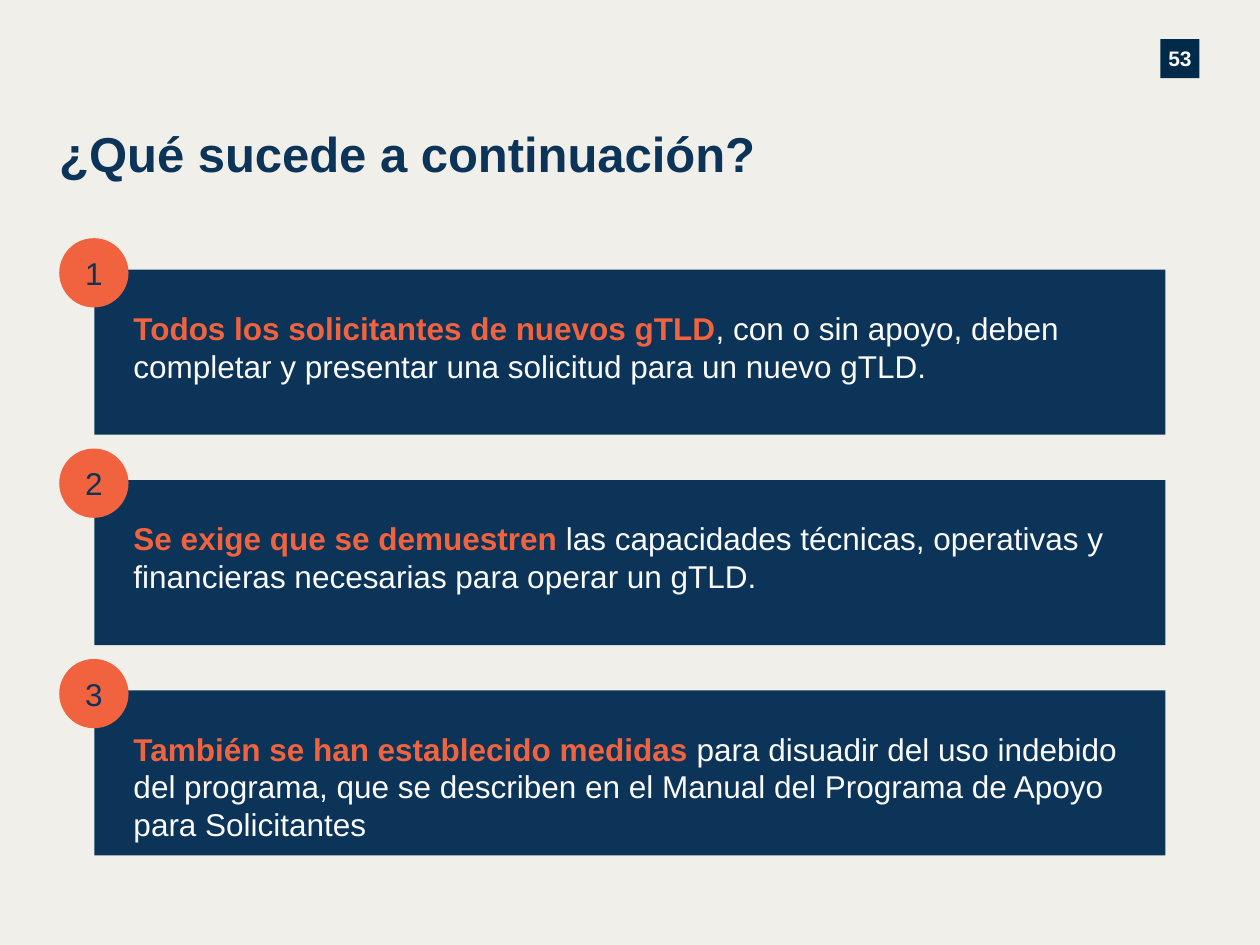
import pptx
import pptx.util
import pptx.dml.color
import pptx.enum.shapes
import pptx.enum.text

Inches = pptx.util.Inches
Shape = pptx.enum.shapes.MSO_SHAPE
Align = pptx.enum.text.PP_ALIGN
Anchor = pptx.enum.text.MSO_ANCHOR

NAVY, DARK, CORAL = "0B3458", "002A49", "F1633E"
WHITE, CREAM = "FAFAFA", "F1EFEA"


def paint(fill, color):
    fill.solid()
    fill.fore_color.rgb = pptx.dml.color.RGBColor.from_string(color)


class Deck:
    font = "Arial"

    def __init__(self, wide, high):
        self.file = pptx.Presentation()
        self.file.slide_width = Inches(wide)
        self.file.slide_height = Inches(high)
        self.slide = self.file.slides.add_slide(self.file.slide_layouts[6])
        paint(self.slide.background.fill, CREAM)

    def label(self, shape, runs, size, pad=(0, 0, 0, 0),
              align=Align.LEFT, anchor=Anchor.TOP):
        """Each run is (text, color, bold); pad is left, top, right, bottom."""
        frame = shape.text_frame
        frame.word_wrap = True
        frame.vertical_anchor = anchor
        (frame.margin_left, frame.margin_top,
         frame.margin_right, frame.margin_bottom) = map(Inches, pad)
        para = frame.paragraphs[0]
        para.alignment = align
        for text, color, bold in runs:
            run = para.add_run()
            run.text = text
            run.font.name = self.font
            run.font.size = pptx.util.Pt(size)
            run.font.bold = bold
            paint(run.font.fill, color)

    def text(self, box, runs, size):
        shape = self.slide.shapes.add_textbox(*map(Inches, box))
        self.label(shape, runs, size)

    def block(self, kind, box, color, runs, size, **style):
        shape = self.slide.shapes.add_shape(kind, *map(Inches, box))
        shape.shadow.inherit = False
        paint(shape.fill, color)
        shape.line.fill.background()
        self.label(shape, runs, size, **style)

    def badge(self, kind, box, color, run, size):
        self.block(kind, box, color, [run], size,
                   align=Align.CENTER, anchor=Anchor.MIDDLE)


STEPS = [
    ("Todos los solicitantes de nuevos gTLD",
     ", con o sin apoyo, deben completar y presentar una solicitud "
     "para un nuevo gTLD."),
    ("Se exige que se demuestren ",
     "las capacidades técnicas, operativas y financieras necesarias "
     "para operar un gTLD."),
    ("También se han establecido medidas ",
     "para disuadir del uso indebido del programa, que se describen en el "
     "Manual del Programa de Apoyo para Solicitantes"),
]


def main():
    deck = Deck(10, 7.5)

    # Page number and title
    deck.badge(Shape.RECTANGLE, (9.21, 0.31, 0.31, 0.31), DARK,
               ("53", WHITE, True), 12)
    deck.text((0.47, 0.98, 5.88, 0.58),
              [("¿Qué sucede a continuación?", NAVY, True)], 28)

    # Numbered steps
    top, pitch = 2.14, 1.67
    for i, (lead, rest) in enumerate(STEPS):
        y = top + i * pitch
        deck.block(Shape.RECTANGLE, (0.75, y, 8.5, 1.31), NAVY,
                   [(lead, CORAL, True), (rest, WHITE, False)], 18,
                   pad=(0.31, 0.31, 0.35, 0.31))
        deck.badge(Shape.OVAL, (0.47, y - 0.25, 0.55, 0.55), CORAL,
                   (str(i + 1), NAVY, False), 18)

    deck.file.save("out.pptx")


if __name__ == "__main__":
    main()
